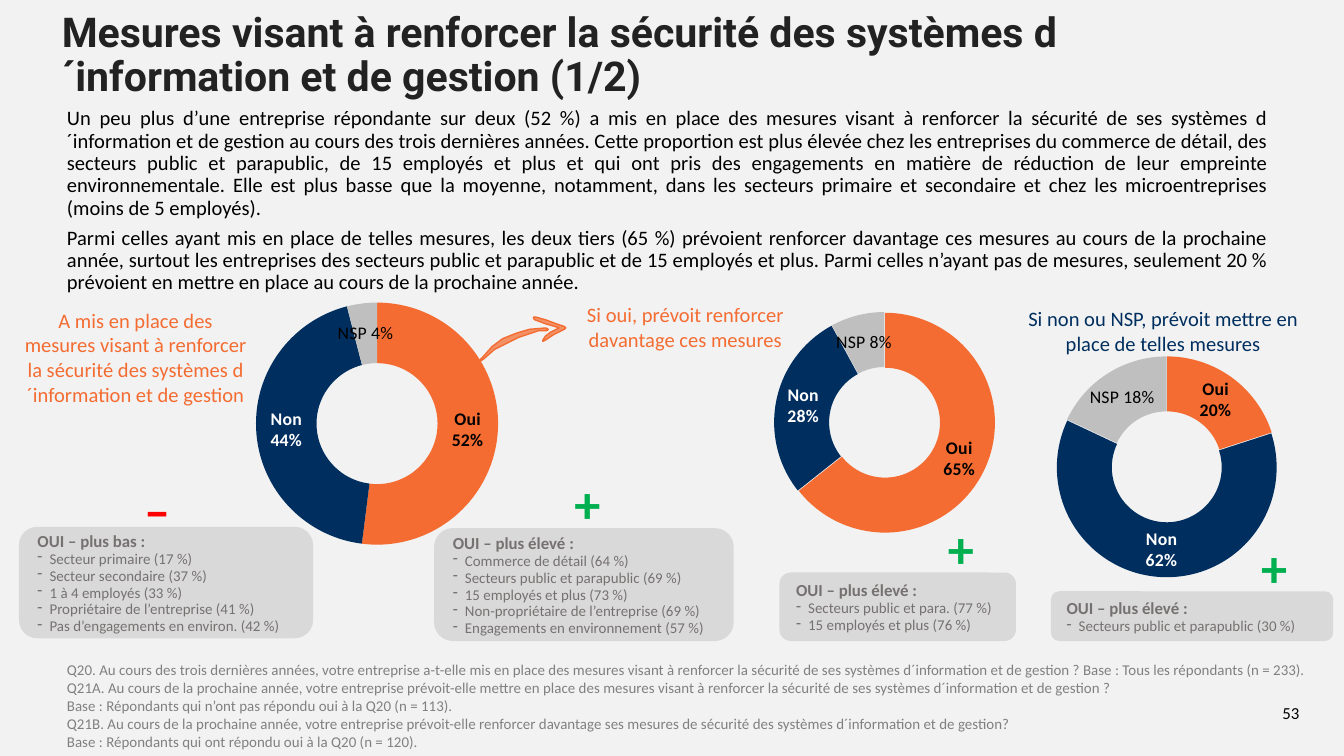
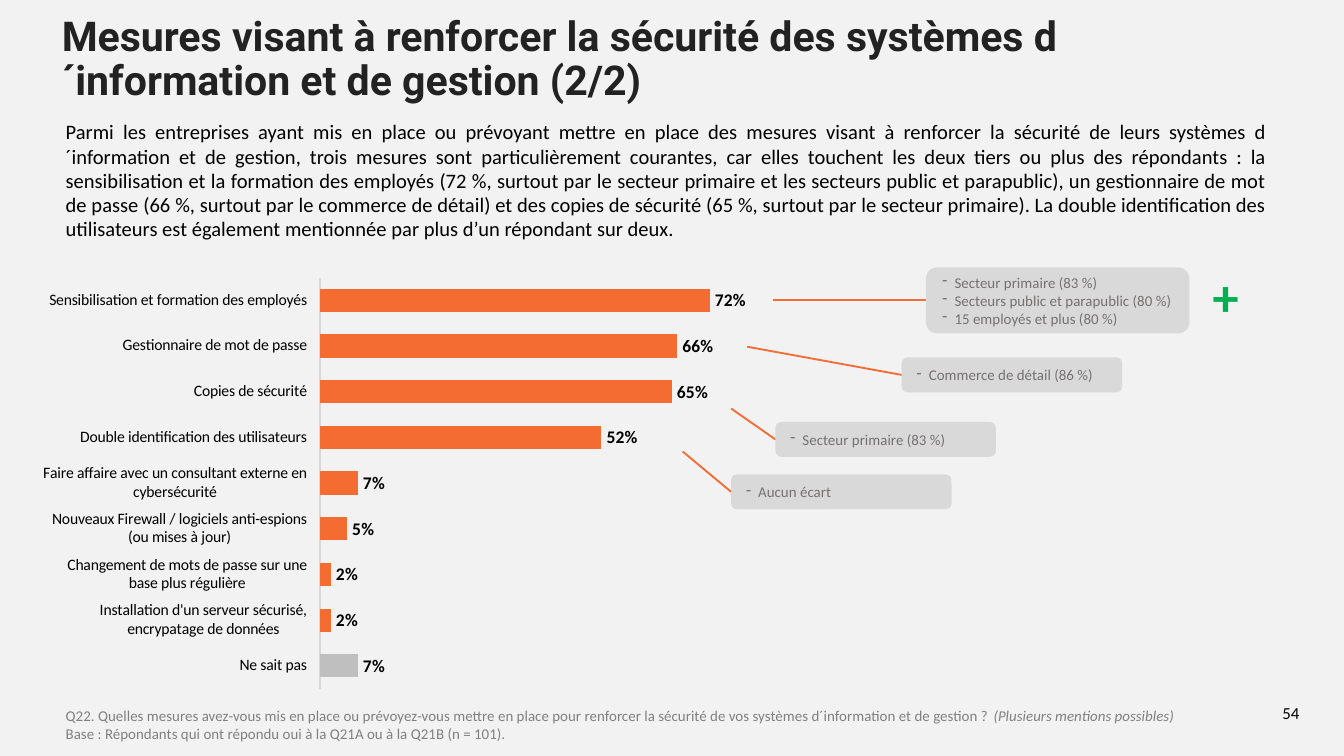
from dataclasses import dataclass
from lxml import etree
from pptx import Presentation
from pptx.chart.data import CategoryChartData as ChartData
from pptx.dml.color import RGBColor as RGB
from pptx.enum.chart import XL_CHART_TYPE as CT, XL_LABEL_POSITION as LP
from pptx.enum.chart import XL_TICK_LABEL_POSITION as TLP, XL_TICK_MARK as TM
from pptx.enum.shapes import MSO_CONNECTOR as MC, MSO_SHAPE as SH
from pptx.enum.text import MSO_ANCHOR as VA, PP_ALIGN as AL
from pptx.oxml.ns import qn
from pptx.util import Inches, Pt


@dataclass(frozen=True)
class Theme:
    bg: str = "F2F2F2"
    ink: str = "000000"
    title: str = "222223"
    orange: str = "F46C31"
    navy: str = "002F5F"
    silver: str = "BFBFBF"
    card: str = "D9D9D9"
    card_text: str = "767171"
    note: str = "808080"
    plus: str = "00B050"
    minus: str = "FF0000"
    white: str = "FFFFFF"
    font: str = "Calibri"
    title_font: str = "Roboto"
    chart_font: str = "TeX Gyre Adventor"
    title_size: float = 22
    body_size: float = 11
    sign_size: float = 28
    head_size: float = 9
    small_size: float = 8
    label_size: float = 9.5
    axis_size: float = 8.5
    chart_size: float = 10


T = Theme()
CELL = 0.1
BODY = {"size": T.body_size}
NOTE = {"size": T.small_size, "color": T.note}
ITEM = {"size": T.small_size, "color": T.card_text}
HEAD = {"size": T.head_size, "color": T.card_text, "bold": True}
LABEL = {"size": T.label_size, "bold": True}


def cells(n):
    return Inches(n * CELL)


@dataclass(frozen=True)
class Box:
    x: float
    y: float
    w: float
    h: float

    def inner(self, x, y, w, h):
        return Box(self.x + x, self.y + y, w, h)

    @property
    def emu(self):
        return [cells(v) for v in (self.x, self.y, self.w, self.h)]


def put(obj, fmt):
    for key, value in fmt.items():
        setattr(obj, key, value)


def style(font, fmt):
    fmt = {"name": T.font, "color": T.ink, "bold": False, **fmt}
    font.color.rgb = RGB.from_string(fmt.pop("color"))
    fmt["size"] = Pt(fmt["size"])
    put(font, fmt)


def paint(fill, color):
    fill.solid()
    fill.fore_color.rgb = RGB.from_string(color)


def paragraph(tf, runs, para=None, bullet=False):
    p = tf.paragraphs[0] if not tf.paragraphs[0].runs else tf.add_paragraph()
    put(p, {"alignment": AL.LEFT, **(para or {})})
    if bullet:
        pPr = p._p.get_or_add_pPr()
        pPr.set("marL", str(cells(0.9)))
        pPr.set("indent", str(-cells(0.9)))
        etree.SubElement(pPr, qn("a:buChar")).set("char", "-")
    for text, fmt in runs:
        for i, line in enumerate(text.split("\n")):
            if i:
                p.add_line_break()
            if line:
                r = p.add_run()
                r.text = line
                style(r.font, fmt)


def textbox(s, box, paras, fmt, para=None, inset=(0.1, 0.05), anchor=VA.TOP):
    tf = s.shapes.add_textbox(*box.emu).text_frame
    dx, dy = map(Inches, inset)
    put(tf, {"word_wrap": True, "vertical_anchor": anchor, "margin_left": dx,
             "margin_right": dx, "margin_top": dy, "margin_bottom": dy})
    for text in paras:
        paragraph(tf, [(text, fmt)] if isinstance(text, str) else text, para)


def sign(s, box, mark):
    color = T.plus if mark == "+" else T.minus
    textbox(s, box, [mark], {"size": T.sign_size, "color": color, "bold": True},
            {"alignment": AL.CENTER})


def card(s, box, items, head=None):
    sp = s.shapes.add_shape(SH.ROUNDED_RECTANGLE, *box.emu)
    sp.shadow.inherit = False
    paint(sp.fill, T.card)
    sp.line.fill.background()
    tf = sp.text_frame
    put(tf, {"word_wrap": True, "vertical_anchor": VA.MIDDLE})
    if head:
        paragraph(tf, [(head, HEAD)])
    for item in items:
        paragraph(tf, [(item, ITEM)], {"line_spacing": Pt(9)} if head else None, True)


def frame(prs, number, title, title_y):
    s = prs.slides.add_slide(prs.slide_layouts[6])
    paint(s.background.fill, T.bg)
    textbox(s, Box(3.9, title_y, 89.6, 5.8), [title],
            {"size": T.title_size, "color": T.title, "bold": True, "name": T.title_font},
            {"line_spacing": 0.9}, (0.07, 0.04), VA.MIDDLE)
    textbox(s, Box(93.5, 51.3, 5.1, 3), [str(number)], {"size": T.head_size},
            {"alignment": AL.CENTER}, anchor=VA.BOTTOM)
    return s


def body(s, box, paras, pitch, after):
    textbox(s, box, paras, BODY, {"alignment": AL.JUSTIFY, "line_spacing": Pt(pitch),
                                  "space_after": Pt(after)}, (0.1, 0))


def add_chart(s, box, kind, cats, vals, plot_box, font):
    data = ChartData(number_format="0%")
    data.categories = cats
    data.add_series("Series 1", vals)
    chart = s.shapes.add_chart(kind, *box.emu, data).chart
    put(chart, {"has_legend": False, "has_title": False})
    style(chart.font, {"size": T.chart_size, "name": font})
    area = chart._chartSpace.find(".//" + qn("c:plotArea"))
    for old in area.findall(qn("c:layout")):
        area.remove(old)
    layout = etree.Element(qn("c:layout"))
    manual = etree.SubElement(layout, qn("c:manualLayout"))
    settings = [("layoutTarget", "inner"), ("xMode", "edge"), ("yMode", "edge"),
                *zip("xywh", plot_box)]
    for tag, value in settings:
        etree.SubElement(manual, qn("c:" + tag)).set("val", str(value))
    area.insert(0, layout)
    plot = chart.plots[0]
    ser = plot.series[0]
    labels = ser.data_labels
    put(labels, {"show_value": True, "number_format": "0%", "number_format_is_linked": False})
    style(labels.font, LABEL)
    return chart, plot, ser


def doughnut(s, box, vals, explode):
    chart, plot, ser = add_chart(s, box, CT.DOUGHNUT, ["Oui", "Non", "NSP"], vals,
                                 (0.18, 0.1, 0.63, 0.84), T.chart_font)
    plot.vary_by_categories = True
    for i, color in enumerate((T.orange, T.navy, T.silver)):
        paint(ser.points[i].format.fill, color)
    style(ser.points[1].data_label.font, {**LABEL, "color": T.white})
    paragraph(ser.points[2].data_label.text_frame,
              [(f"NSP {vals[2]:.0%}", {"size": T.label_size})], {"alignment": AL.CENTER})
    ser.data_labels.show_category_name = True
    root = chart._chartSpace
    for show in root.iter(qn("c:showCatName")):
        show.set("val", "1")
    for last in list(root.iter(qn("c:showBubbleSize"))):
        gap = etree.Element(qn("c:separator"))
        gap.text = "\n"
        last.addnext(gap)
    for hole in root.iter(qn("c:holeSize")):
        hole.set("val", "60")
    if explode:
        node = etree.Element(qn("c:explosion"))
        node.set("val", str(explode))
        root.find(".//" + qn("c:ser")).find(qn("c:tx")).addnext(node)


def bars(s, box, cats, vals):
    chart, plot, ser = add_chart(s, box, CT.BAR_CLUSTERED, cats, vals,
                                 (0.374, 0, 0.604, 1), T.font)
    put(plot, {"gap_width": 98, "vary_by_categories": False})
    ser.data_labels.position = LP.OUTSIDE_END
    paint(ser.format.fill, T.orange)
    paint(ser.points[len(vals) - 1].format.fill, T.silver)
    put(chart.value_axis, {"visible": False, "has_major_gridlines": False,
                           "minimum_scale": 0, "maximum_scale": 0.8})
    axis = chart.category_axis
    put(axis, {"reverse_order": True, "major_tick_mark": TM.NONE, "minor_tick_mark": TM.NONE,
               "tick_label_position": TLP.LOW, "has_major_gridlines": False})
    style(axis.tick_labels.font, {"size": T.axis_size})
    axis.format.line.width = Pt(0.75)
    axis.format.line.color.rgb = RGB.from_string(T.card)


def panel(s, box, vals, chart, caption, color, cards, explode=0):
    doughnut(s, box.inner(*chart), vals, explode)
    text, place = caption
    textbox(s, box.inner(*place), [text], {**BODY, "color": color},
            {"alignment": AL.CENTER}, (0, 0))
    for place, head, items, mark, (x, y) in cards:
        card(s, box.inner(*place), items, head)
        sign(s, box.inner(x, y, 11.2, 5.7), mark)


def sketch_arrow(s, box):
    tail = [(50, 8), (52, 9), (51, 10), (45, 10.5), (39, 11.5), (30, 15), (20, 20), (12, 24),
            (4, 31), (1, 33), (0, 33), (3, 30), (10, 22), (18, 16), (28, 12), (38, 9)]
    head = [(64, 7), (61, 6), (58, 5), (50, 2.5), (43, 0), (41, 0), (41, 1), (42, 2), (50, 5),
            (57, 7), (60, 8), (58, 9), (54, 11), (50, 14.5), (48, 17), (48, 18.5), (50, 17),
            (56, 13), (60, 11), (64, 9), (65, 8)]
    x, y, w, _ = box.emu
    for outline in (tail, head):
        start, *rest = outline
        fb = s.shapes.build_freeform(*start, scale=w / 65)
        fb.add_line_segments(rest, close=True)
        sp = fb.convert_to_shape(x, y)
        sp.shadow.inherit = False
        paint(sp.fill, T.orange)
        alpha = etree.SubElement(sp._element.spPr.find(".//" + qn("a:srgbClr")), qn("a:alpha"))
        alpha.set("val", "72000")
        sp.line.color.rgb = RGB.from_string(T.orange)
        sp.line.width = Pt(0.75)


def callout(s, box, items, start):
    end = (box.x, box.y + box.h / 2)
    cn = s.shapes.add_connector(MC.STRAIGHT, *map(cells, (*start, *end)))
    cn.line.color.rgb = RGB.from_string(T.orange)
    cn.line.width = Pt(1)
    etree.SubElement(cn._element.spPr, qn("a:effectLst"))
    card(s, box, items)


def measures_slide(prs):
    s = frame(prs, 53, "Mesures visant à renforcer la sécurité des systèmes d´information et de gestion (1/2)", 1.3)
    body(s, Box(4, 8, 91.4, 14), [
        "Un peu plus d’une entreprise répondante sur deux (52 %) a mis en place des mesures visant à renforcer la sécurité de ses systèmes d´information et de gestion au cours des trois dernières années. Cette proportion est plus élevée chez les entreprises du commerce de détail, des secteurs public et parapublic, de 15 employés et plus et qui ont pris des engagements en matière de réduction de leur empreinte environnementale. Elle est plus basse que la moyenne, notamment, dans les secteurs primaire et secondaire et chez les microentreprises (moins de 5 employés).",
        "Parmi celles ayant mis en place de telles mesures, les deux tiers (65 %) prévoient renforcer davantage ces mesures au cours de la prochaine année, surtout les entreprises des secteurs public et parapublic et de 15 employés et plus. Parmi celles n’ayant pas de mesures, seulement 20 % prévoient en mettre en place au cours de la prochaine année."], 12, 4)
    high = "OUI – plus élevé :"
    panel(s, Box(1.4, 20.3, 53.2, 27.4), (0.52, 0.44, 0.04), (12.5, 0, 28.6, 21.6),
          ("A mis en place des mesures visant à renforcer la sécurité des systèmes d´information et de gestion", (0.2, 2.6, 17, 9.3)),
          T.orange, [
              ((30.9, 19, 22.3, 8.4), high,
               ["Commerce de détail (64 %)", "Secteurs public et parapublic (69 %)",
                "15 employés et plus (73 %)", "Non-propriétaire de l’entreprise (69 %)",
                "Engagements en environnement (57 %)"], "+", (36.7, 14.3)),
              ((0, 18.9, 21.9, 8.3), "OUI – plus bas :",
               ["Secteur primaire (17 %)", "Secteur secondaire (37 %)", "1 à 4 employés (33 %)",
                "Propriétaire de l’entreprise (41 %)", "Pas d’engagements en environ. (42 %)"],
               "–", (4.7, 14.7))])
    panel(s, Box(42.5, 20.3, 36.5, 27.4), (0.65, 0.28, 0.08), (10.4, 0.9, 26.1, 19.7),
          ("Si oui, prévoit renforcer davantage ces mesures", (0, 2.2, 17, 3.7)), T.orange,
          [((15.5, 22.3, 17.6, 5.1), high,
            ["Secteurs public et para. (77 %)", "15 employés et plus (76 %)"], "+", (23.4, 17.6))], 1)
    panel(s, Box(73.9, 20.3, 26.1, 27.4), (0.2, 0.62, 0.18), (0, 4.2, 26.1, 19.7),
          ("Si non ou NSP, prévoit mettre en place de telles mesures", (1.7, 2.5, 21.9, 3.7)), T.navy,
          [((4.3, 23.7, 21, 3.7), high, ["Secteurs public et parapublic (30 %)"], "+", (15.3, 19))], 1)
    sketch_arrow(s, Box(35.6, 23.6, 6.5, 3.4))
    textbox(s, Box(4, 48.7, 94.6, 7.7), [
        "Q20. Au cours des trois dernières années, votre entreprise a-t-elle mis en place des mesures visant à renforcer la sécurité de ses systèmes d´information et de gestion ? Base : Tous les répondants (n = 233).",
        "Q21A. Au cours de la prochaine année, votre entreprise prévoit-elle mettre en place des mesures visant à renforcer la sécurité de ses systèmes d´information et de gestion ?\nBase : Répondants qui n’ont pas répondu oui à la Q20 (n = 113).",
        "Q21B. Au cours de la prochaine année, votre entreprise prévoit-elle renforcer davantage ses mesures de sécurité des systèmes d´information et de gestion?\nBase : Répondants qui ont répondu oui à la Q20 (n = 120)."], NOTE)


def ranking_slide(prs):
    s = frame(prs, 54, "Mesures visant à renforcer la sécurité des systèmes d´information et de gestion (2/2)", 1.6)
    body(s, Box(3.9, 8.9, 91.4, 9.1), [
        "Parmi les entreprises ayant mis en place ou prévoyant mettre en place des mesures visant à renforcer la sécurité de leurs systèmes d´information et de gestion, trois mesures sont particulièrement courantes, car elles touchent les deux tiers ou plus des répondants : la sensibilisation et la formation des employés (72 %, surtout par le secteur primaire et les secteurs public et parapublic), un gestionnaire de mot de passe (66 %, surtout par le commerce de détail) et des copies de sécurité (65 %, surtout par le secteur primaire). La double identification des utilisateurs est également mentionnée par plus d’un répondant sur deux."], 13, 2)
    measures = {
        "Sensibilisation et formation des employés": 0.72,
        "Gestionnaire de mot de passe": 0.66,
        "Copies de sécurité": 0.65,
        "Double identification des utilisateurs": 0.52,
        "Faire affaire avec un consultant externe en cybersécurité": 0.07,
        "Nouveaux Firewall / logiciels anti-espions (ou mises à jour)": 0.05,
        "Changement de mots de passe sur une base plus régulière": 0.02,
        "Installation d'un serveur sécurisé, encrypatage de données": 0.02,
        "Ne sait pas": 0.07,
    }
    bars(s, Box(3.2, 20.6, 54, 30.7), list(measures), list(measures.values()))
    callout(s, Box(68.9, 19.9, 19.6, 4.9), ["Secteur primaire (83 %)", "Secteurs public et parapublic (80 %)",
                                            "15 employés et plus (80 %)"], (57.5, 22.35))
    for x, y, item, start in (
            (67.1, 26.6, "Commerce de détail (86 %)", (55.6, 25.8)),
            (57.7, 31.4, "Secteur primaire (83 %)", (54.4, 30.4)),
            (54.4, 35.3, "Aucun écart", (50.8, 33.6))):
        callout(s, Box(x, y, 16.4, 2.6), [item], start)
    sign(s, Box(85.6, 19.2, 11.2, 5.7), "+")
    textbox(s, Box(3.9, 52.1, 85.2, 3.7), [[
        ("Q22. Quelles mesures avez-vous mis en place ou prévoyez-vous mettre en place pour renforcer la sécurité de vos systèmes d´information et de gestion ? ", NOTE),
        ("(Plusieurs mentions possibles)\n", {**NOTE, "italic": True}),
        ("Base : Répondants qui ont répondu oui à la Q21A ou à la Q21B (n = 101).", NOTE)]], NOTE)


def main():
    prs = Presentation()
    put(prs, {"slide_width": cells(100), "slide_height": cells(56.25)})
    measures_slide(prs)
    ranking_slide(prs)
    prs.save("out.pptx")


if __name__ == "__main__":
    main()
